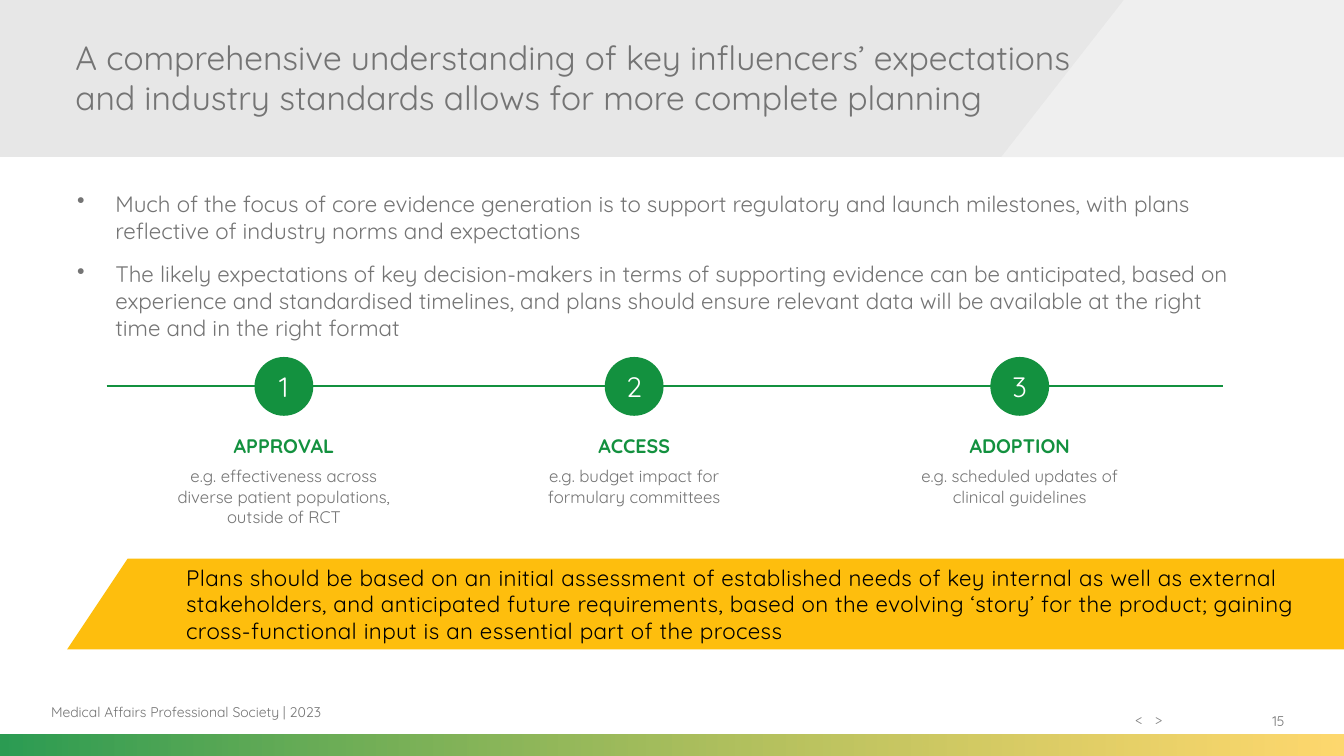
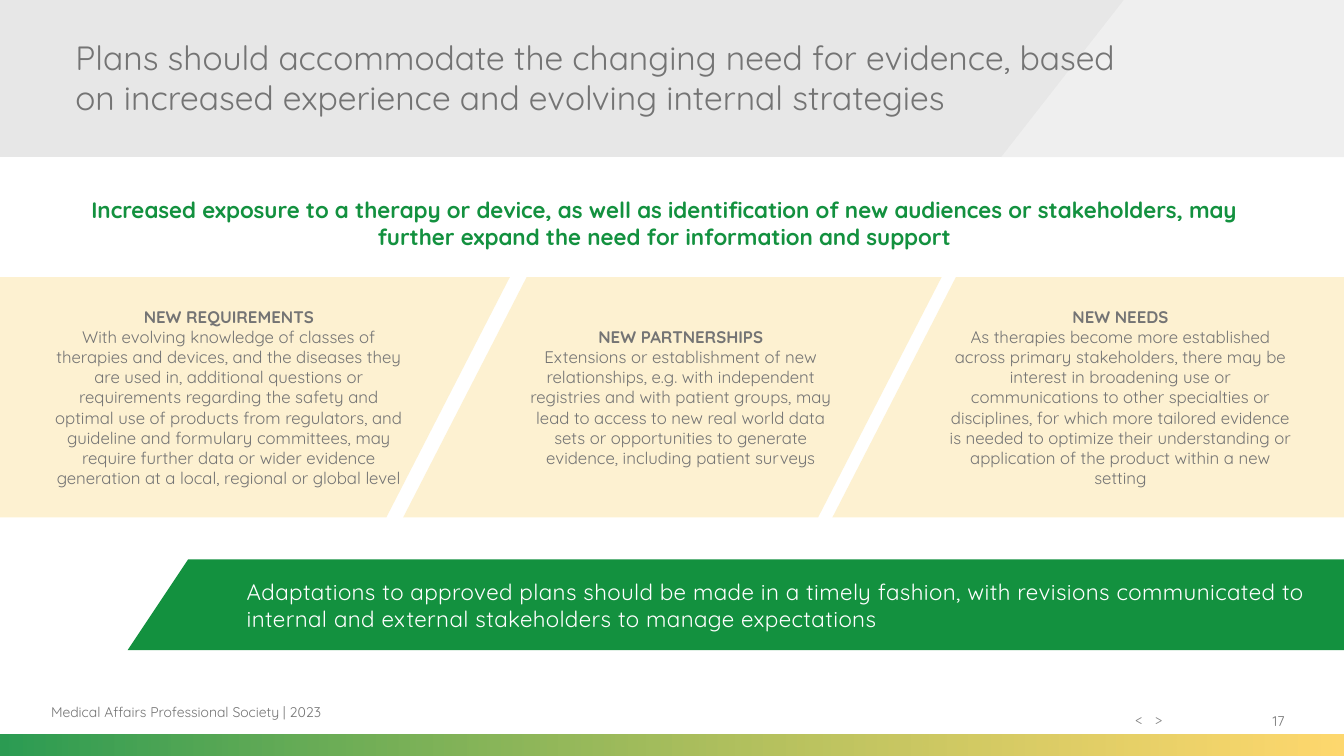
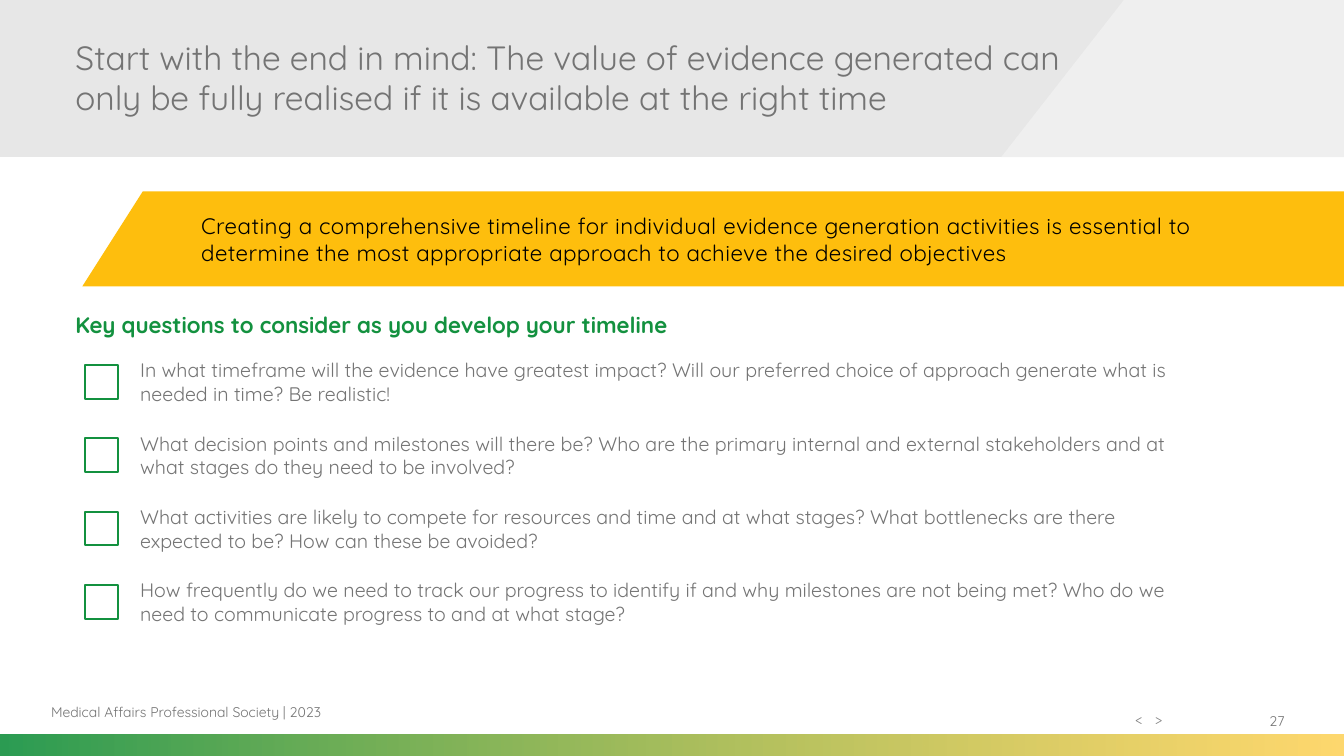
from dataclasses import dataclass
from pptx import Presentation
from pptx.dml.color import RGBColor
from pptx.enum.shapes import MSO_CONNECTOR, MSO_SHAPE
from pptx.enum.text import MSO_ANCHOR, PP_ALIGN
from pptx.oxml.ns import qn
from pptx.util import Inches, Pt
from lxml.etree import SubElement


@dataclass(frozen=True)
class Theme:
    font: str = "Quicksand"
    green: str = "13913F"
    yellow: str = "FEBE0D"
    cream: str = "FDF1D1"
    band: str = "D9D9D9"
    wedge: str = "F2F2F2"
    grey: str = "747474"
    nav: str = "808080"
    black: str = "000000"
    white: str = "FFFFFF"
    title: int = 24
    number: int = 20
    body: int = 16
    label: int = 14
    small: int = 12
    foot: int = 10


T = Theme()
COLS, ROWS = 160, 90
CELL = 7.5 / ROWS


def grid(n):
    return Inches(n * CELL)


@dataclass(frozen=True)
class Box:
    x: float
    y: float
    w: float
    h: float

    def sub(self, x, y, w, h):
        return Box(self.x + x, self.y + y, w, h)

    def emu(self):
        return [grid(n) for n in (self.x, self.y, self.w, self.h)]


@dataclass(frozen=True)
class Style:
    size: int
    color: str = T.grey
    bold: bool = False
    spacing: int = 0


def paint(sp, color=None, line=None):
    sp.shadow.inherit = False
    if color:
        sp.fill.solid()
        sp.fill.fore_color.rgb = RGBColor.from_string(color)
    else:
        sp.fill.background()
    if line:
        sp.line.color.rgb = RGBColor.from_string(line)
        sp.line.width = Pt(1.5)
    else:
        sp.line.fill.background()
    return sp


def set_alpha(sp, *shares):
    for clr, share in zip(sp._element.spPr.iter(qn("a:srgbClr")), shares):
        SubElement(clr, qn("a:alpha")).set("val", str(share * 1000))


def write(sp, items, align=PP_ALIGN.LEFT, anchor=MSO_ANCHOR.TOP, before=0, after=0,
          insets=(0.1, 0.05, 0.1, 0.05), bullet=False, tab=None):
    tf = sp.text_frame
    tf.word_wrap = True
    tf.vertical_anchor = anchor
    tf.margin_left, tf.margin_top, tf.margin_right, tf.margin_bottom = map(Inches, insets)
    for i, (text, style) in enumerate(items):
        p = tf.add_paragraph() if i else tf.paragraphs[0]
        p.text = text
        pPr = p._p.get_or_add_pPr()
        if bullet:
            pPr.set("marL", str(Inches(0.38)))
            pPr.set("indent", str(-Inches(0.38)))
            SubElement(pPr, qn("a:buChar")).set("char", "•")
        if tab:
            stop = SubElement(SubElement(pPr, qn("a:tabLst")), qn("a:tab"))
            stop.set("pos", str(grid(tab)))
            stop.set("algn", "l")
        p.alignment = align
        p.space_before = Pt(before if i else 0)
        p.space_after = Pt(after)
        for r in p.runs:
            r.font.name = T.font
            r.font.size = Pt(style.size)
            r.font.bold = style.bold
            r.font.color.rgb = RGBColor.from_string(style.color)
            if style.spacing:
                r._r.get_or_add_rPr().set("spc", str(style.spacing))
    return sp


def add_text(s, box, items, **layout):
    return write(s.shapes.add_textbox(*box.emu()), items, **layout)


def add_preset(s, kind, box, color=None, line=None):
    return paint(s.shapes.add_shape(kind, *box.emu()), color, line)


def add_slanted(s, box, color, lean_left=0, lean_right=0):
    right, bottom = box.x + box.w, box.y + box.h
    corners = [(box.x + lean_left, box.y), (right, box.y),
               (right - lean_right, bottom), (box.x, bottom)]
    points = [(grid(x), grid(y)) for x, y in corners]
    fb = s.shapes.build_freeform(*points[0])
    fb.add_line_segments(points[1:], close=True)
    return paint(fb.convert_to_shape(), color)


def add_header(s, box, title):
    set_alpha(add_preset(s, MSO_SHAPE.RECTANGLE, box, T.band), 62)
    wedge = box.sub(119.2, 0, box.w - 119.2, box.h)
    set_alpha(add_slanted(s, wedge, T.wedge, lean_left=14.6), 79)
    add_text(s, box.sub(7.8, 0, 126.2, 18.4), [(title, Style(T.title))],
             anchor=MSO_ANCHOR.MIDDLE)


def add_footer(s, box, number):
    bar = add_preset(s, MSO_SHAPE.RECTANGLE, box.sub(0, 5.2, box.w, 2.5), T.green)
    bar.fill.gradient()
    bar.fill.gradient_angle = 0
    for stop, color, position in zip(bar.fill.gradient_stops, (T.green, T.yellow), (0, 1)):
        stop.color.rgb = RGBColor.from_string(color)
        stop.position = position
    set_alpha(bar, 90, 60)
    add_text(s, box.sub(143.2, 1.1, 10.9, 4.8), [(str(number), Style(T.foot))],
             align=PP_ALIGN.RIGHT, anchor=MSO_ANCHOR.MIDDLE)
    add_text(s, box.sub(134, 1.7, 8.4, 3.2), [("<\t>", Style(T.foot, T.nav))], tab=2.3)
    add_text(s, box.sub(4.9, 0, 50.6, 4.8),
             [("Medical Affairs Professional Society | 2023", Style(T.foot))],
             anchor=MSO_ANCHOR.MIDDLE)


def add_slide(prs, title, number):
    s = prs.slides.add_slide(prs.slide_layouts[6])
    add_header(s, Box(0, 0, COLS, 18.7), title)
    add_footer(s, Box(0, 82.3, COLS, 7.7), number)
    return s


def add_banner(s, box, text, fill, color, right=0.4):
    sp = add_slanted(s, box, fill, lean_left=7.2)
    write(sp, [(text, Style(T.body, color, spacing=30))],
          anchor=MSO_ANCHOR.MIDDLE, insets=(1.18, 0.1, right, 0.1))


def add_milestones(s, box, milestones):
    size, label_w = 7, 28
    y = grid(box.y + size / 2)
    line = s.shapes.add_connector(MSO_CONNECTOR.STRAIGHT, grid(box.x), y, grid(box.x + box.w), y)
    line.line.color.rgb = RGBColor.from_string(T.green)
    line.line.width = Pt(1.5)
    SubElement(line._element.spPr, qn("a:effectLst"))
    for number, (center, name, example) in enumerate(milestones, 1):
        dot = add_preset(s, MSO_SHAPE.OVAL, box.sub(center - size / 2, 0, size, size), T.green)
        write(dot, [(str(number), Style(T.number, T.white))],
              align=PP_ALIGN.CENTER, anchor=MSO_ANCHOR.MIDDLE)
        add_text(s, box.sub(center - label_w / 2, 8.6, label_w, box.h - 8.6),
                 [(name, Style(T.label, T.green, True)), (example, Style(T.small))],
                 align=PP_ALIGN.CENTER, before=6, insets=(0.04, 0.05, 0.04, 0.05))


def add_panels(s, box, panels):
    lean = 14.7
    last = len(panels) - 1
    for i, (left, right, text_x, text_w, name, text) in enumerate(panels):
        add_slanted(s, box.sub(left, 0, right - left, box.h), T.cream,
                    lean if i else 0, lean if i < last else 0)
        add_text(s, box.sub(text_x, 0, text_w, box.h),
                 [(name, Style(T.small, bold=True)), (text, Style(T.small))],
                 align=PP_ALIGN.CENTER, anchor=MSO_ANCHOR.MIDDLE)


def add_checklist(s, box, questions):
    row_h, check = 6.5, 4
    step = (box.h - row_h) / (len(questions) - 1)
    for i, question in enumerate(questions):
        row = box.sub(0, i * step, box.w, row_h)
        add_preset(s, MSO_SHAPE.RECTANGLE, row.sub(0, (row_h - check) / 2, check, check),
                   line=T.green)
        add_text(s, row.sub(5.4, 0, box.w - 5.4, row_h), [(question, Style(T.label))],
                 anchor=MSO_ANCHOR.MIDDLE)


def standards_slide(prs):
    s = add_slide(prs, "A comprehensive understanding of key influencers’ expectations and "
                  "industry standards allows for more complete planning", 15)
    bullets = [
        "Much of the focus of core evidence generation is to support regulatory and launch "
        "milestones, with plans reflective of industry norms and expectations",
        "The likely expectations of key decision-makers in terms of supporting evidence can be "
        "anticipated, based on experience and standardised timelines, and plans should ensure "
        "relevant data will be available at the right time and in the right format",
    ]
    add_text(s, Box(8, 22, 141.8, 21.5), [(b, Style(T.body)) for b in bullets],
             before=6, after=6, bullet=True)
    add_milestones(s, Box(12.7, 42.5, 132.9, 21), [
        (21.1, "APPROVAL",
         "e.g. effectiveness across diverse patient populations, outside of RCT"),
        (62.8, "ACCESS", "e.g. budget impact for formulary committees"),
        (108.7, "ADOPTION", "e.g. scheduled updates of clinical guidelines"),
    ])
    add_banner(s, Box(8, 66.5, 152, 10.8),
               "Plans should be based on an initial assessment of established needs of key "
               "internal as well as external stakeholders, and anticipated future requirements, "
               "based on the evolving ‘story’ for the product; gaining cross-functional input is "
               "an essential part of the process", T.yellow, T.black)


def changing_needs_slide(prs):
    s = add_slide(prs, "Plans should accommodate the changing need for evidence, based on "
                  "increased experience and evolving internal strategies", 17)
    add_text(s, Box(7.8, 22.8, 142.6, 10.2),
             [("Increased exposure to a therapy or device, as well as identification of new "
               "audiences or stakeholders, may further expand the need for information and "
               "support", Style(T.body, T.green, True))], align=PP_ALIGN.CENTER)
    add_panels(s, Box(0, 33, COLS, 28.6), [
        (0, 60.7, 5.3, 43.9, "NEW REQUIREMENTS",
         "With evolving knowledge of classes of therapies and devices, and the diseases they are "
         "used in, additional questions or requirements regarding the safety and optimal use of "
         "products from regulators, and guideline and formulary committees, may require further "
         "data or wider evidence generation at a local, regional or global level"),
        (48, 112.1, 61.2, 39.7, "NEW PARTNERSHIPS",
         "Extensions or establishment of new relationships, e.g. with independent registries and "
         "with patient groups, may lead to access to new real world data sets or opportunities "
         "to generate evidence, including patient surveys"),
        (99.1, COLS, 111.7, 43.4, "NEW NEEDS",
         "As therapies become more established across primary stakeholders, there may be "
         "interest in broadening use or communications to other specialties or disciplines, for "
         "which more tailored evidence is needed to optimize their understanding or application "
         "of the product within a new setting"),
    ])
    add_banner(s, Box(15.2, 66.6, 144.8, 10.8),
               "Adaptations to approved plans should be made in a timely fashion, with revisions "
               "communicated to internal and external stakeholders to manage expectations",
               T.green, T.white, right=0.1)


def timeline_slide(prs):
    s = add_slide(prs, "Start with the end in mind: The value of evidence generated can only be "
                  "fully realised if it is available at the right time", 27)
    add_banner(s, Box(9.8, 22.8, 150.2, 11.3),
               "Creating a comprehensive timeline for individual evidence generation activities "
               "is essential to determine the most appropriate approach to achieve the desired "
               "objectives", T.yellow, T.black)
    add_text(s, Box(7.8, 36.4, 91, 4.4),
             [("Key questions to consider as you develop your timeline",
               Style(T.body, T.green, True))])
    add_checklist(s, Box(10.1, 42.2, 133.4, 32.7), [
        "In what timeframe will the evidence have greatest impact? Will our preferred choice of "
        "approach generate what is needed in time? Be realistic!",
        "What decision points and milestones will there be? Who are the primary internal and "
        "external stakeholders and at what stages do they need to be involved?",
        "What activities are likely to compete for resources and time and at what stages? What "
        "bottlenecks are there expected to be? How can these be avoided?",
        "How frequently do we need to track our progress to identify if and why milestones are "
        "not being met? Who do we need to communicate progress to and at what stage?",
    ])


def main():
    prs = Presentation()
    prs.slide_width, prs.slide_height = grid(COLS), grid(ROWS)
    standards_slide(prs)
    changing_needs_slide(prs)
    timeline_slide(prs)
    prs.save("out.pptx")


if __name__ == "__main__":
    main()
